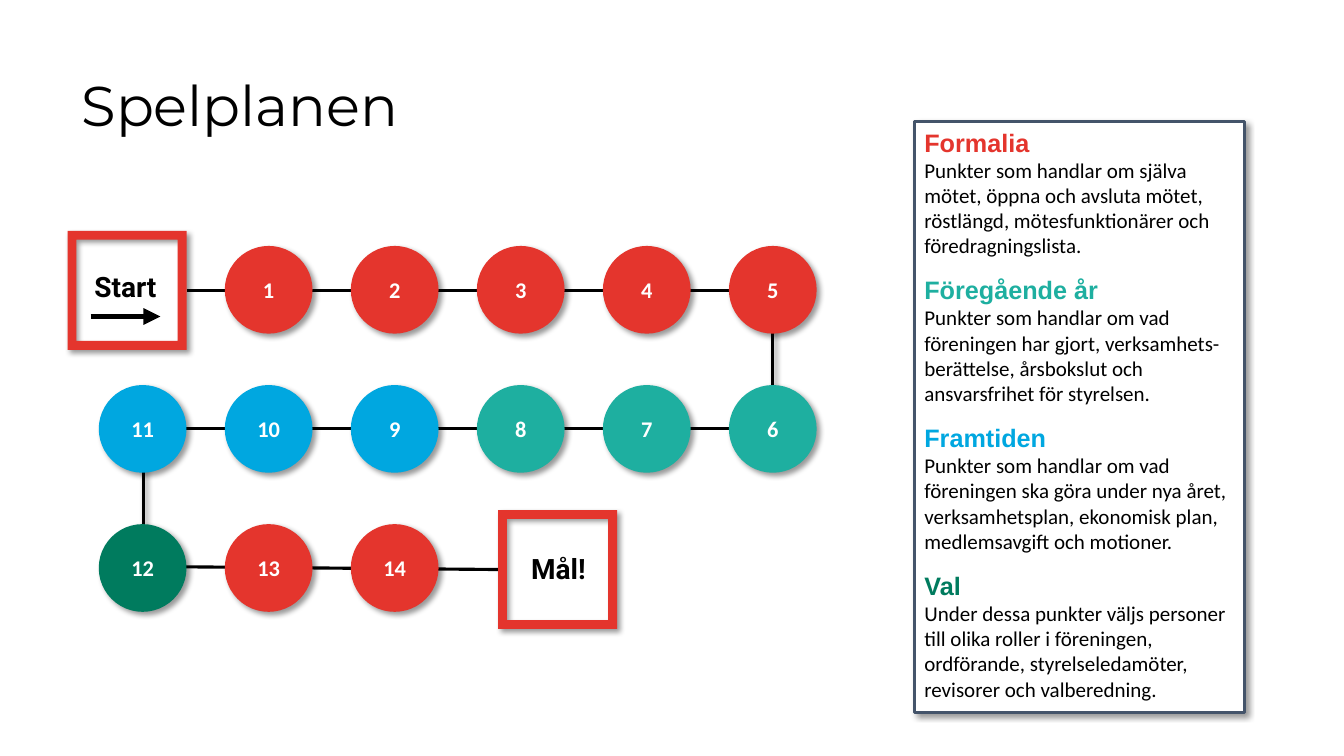
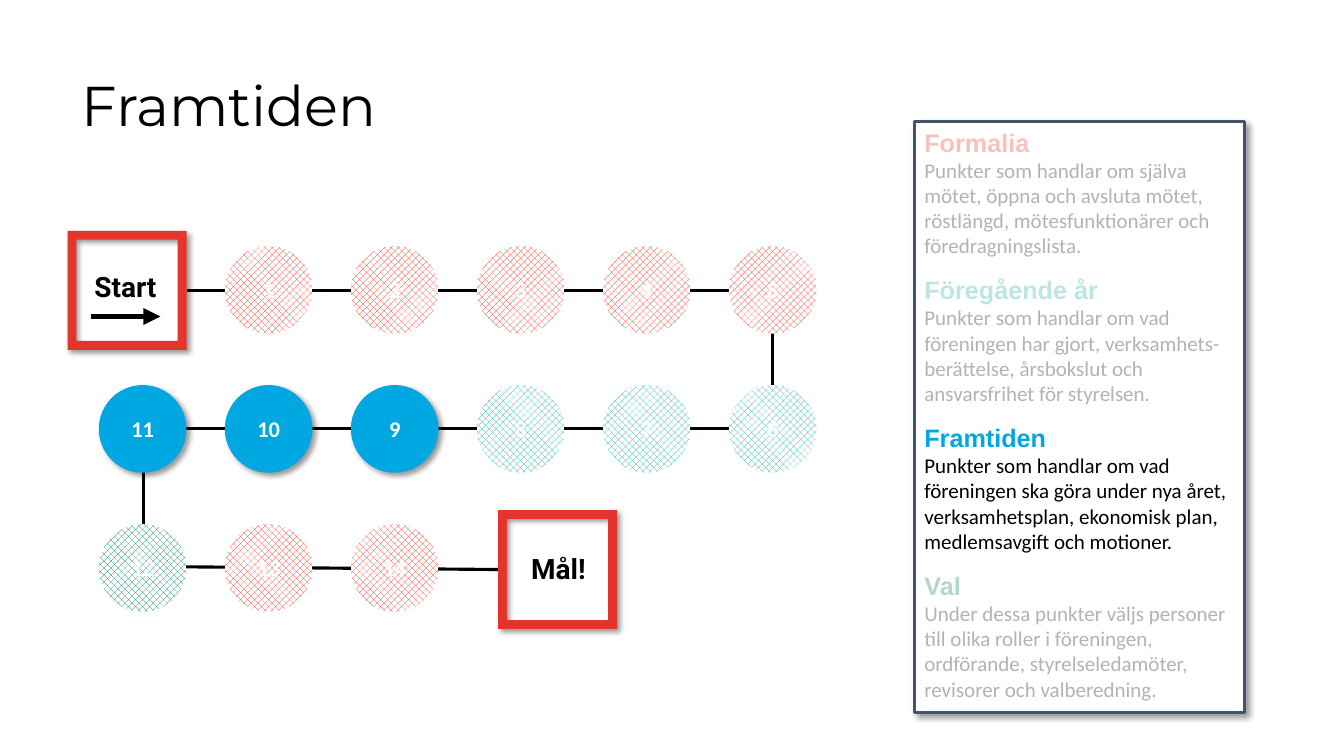
from dataclasses import dataclass
from typing import Optional

from pptx import Presentation
from pptx.dml.color import RGBColor
from pptx.enum.dml import MSO_PATTERN
from pptx.enum.shapes import MSO_CONNECTOR, MSO_SHAPE as Preset
from pptx.enum.text import MSO_ANCHOR as Anchor, MSO_AUTO_SIZE as AutoSize, PP_ALIGN as Align
from pptx.oxml import parse_xml
from pptx.oxml.ns import nsdecls
from pptx.util import Inches, Pt

RED = RGBColor(0xE4, 0x35, 0x2D)
TEAL = RGBColor(0x1E, 0xAF, 0xA0)
BLUE = RGBColor(0x00, 0xA7, 0xE0)
GREEN = RGBColor(0x00, 0x7B, 0x5E)
SLATE = RGBColor(0x44, 0x54, 0x6A)
BLACK = RGBColor(0, 0, 0)
WHITE = RGBColor(0xFF, 0xFF, 0xFF)

# Board grid
STOP_SIZE = 0.87
LEFT, TOP = 0.98, 2.44
COLUMN_STEP, ROW_STEP = 1.25, 1.38
GOAL_SIZE = 1.18


@dataclass(frozen=True)
class Section:
    heading: str
    body: str
    color: RGBColor
    stops: tuple[int, ...]


@dataclass(frozen=True)
class Box:
    left: float
    top: float
    width: float
    height: float

    def lengths(self) -> tuple:
        return tuple(Inches(n) for n in (self.left, self.top, self.width, self.height))


@dataclass(frozen=True)
class Track:
    start: tuple[float, float]
    end: tuple[float, float]
    vertical: bool = False


@dataclass(frozen=True)
class BoardSlide:
    title: str
    width: float
    focus: Optional[Section] = None
    veils: tuple[Box, ...] = ()


FORMALIA = Section(
    "Formalia",
    "Punkter som handlar om själva mötet, öppna och avsluta mötet, röstlängd, "
    "mötesfunktionärer och föredragningslista.",
    RED, (1, 2, 3, 4, 5, 13, 14))
PAST_YEAR = Section(
    "Föregående år",
    "Punkter som handlar om vad föreningen har gjort, verksamhets-\n"
    "berättelse, årsbokslut och ansvarsfrihet för styrelsen.",
    TEAL, (6, 7, 8))
FUTURE = Section(
    "Framtiden",
    "Punkter som handlar om vad föreningen ska göra under nya året, "
    "verksamhetsplan, ekonomisk plan, medlemsavgift och motioner.",
    BLUE, (9, 10, 11))
ELECTION = Section(
    "Val",
    "Under dessa punkter väljs personer till olika roller i föreningen, ordförande, "
    "styrelseledamöter, revisorer och valberedning.",
    GREEN, (12,))
SECTIONS = (FORMALIA, PAST_YEAR, FUTURE, ELECTION)

# Grid cells (row, column) in playing order: right, back left, right again
ROUTE = ([(0, column) for column in range(1, 6)]
         + [(1, column) for column in range(5, -1, -1)]
         + [(2, column) for column in range(3)])

TRACKS = (
    Track((1.42, 5.62), (4.94, 5.65)),
    Track((1.42, 4.25), (1.42, 5.63), vertical=True),
    Track((7.65, 4.25), (1.42, 4.25)),
    Track((7.66, 2.88), (7.66, 4.26), vertical=True),
    Track((1.85, 2.88), (7.65, 2.88)),
)

SLIDES = (
    BoardSlide("Spelplanen", 3.6),
    BoardSlide("Framtiden", 3.31, FUTURE,
               (Box(9.12, 5.62, 3.19, 1.41), Box(9.11, 1.26, 3.19, 2.8))),
)


def set_shadow(shape, visible: bool) -> None:
    """Replace the theme shadow; call after fill and line are set."""
    shadow = (
        f'<a:outerShdw blurRad="{Pt(4)}" dist="{Pt(3)}" dir="2700000" algn="tl" '
        'rotWithShape="0"><a:srgbClr val="000000"><a:alpha val="40000"/></a:srgbClr>'
        '</a:outerShdw>') if visible else ""
    shape._element.spPr.append(
        parse_xml(f'<a:effectLst {nsdecls("a")}>{shadow}</a:effectLst>'))


def style_font(paragraph, name: str, size: float, color: RGBColor, bold: bool = False) -> None:
    font = paragraph.font
    font.name, font.size, font.bold = name, Pt(size), bold
    font.color.rgb = color


def add_preset(slide, preset, box: Box, color: RGBColor, shadow: bool = True,
               pattern: bool = False, outline: Optional[RGBColor] = None):
    shape = slide.shapes.add_shape(preset, *box.lengths())
    if pattern:
        shape.fill.patterned()
        shape.fill.pattern = MSO_PATTERN.PERCENT_50
        shape.fill.fore_color.rgb = color
        shape.fill.back_color.rgb = WHITE
    else:
        shape.fill.solid()
        shape.fill.fore_color.rgb = color
    if outline is None:
        shape.line.fill.background()
    else:
        shape.line.color.rgb = outline
        shape.line.width = Pt(2.25)
    set_shadow(shape, shadow)
    return shape


def add_line(slide, start: tuple[float, float], end: tuple[float, float],
             width: float = 2.25, shadow: bool = False, arrow: bool = False) -> None:
    line = slide.shapes.add_connector(
        MSO_CONNECTOR.STRAIGHT, *(Inches(n) for n in (*start, *end)))
    line.line.color.rgb = BLACK
    line.line.width = Pt(width)
    if arrow:
        line.line._get_or_add_ln().append(
            parse_xml(f'<a:tailEnd {nsdecls("a")} type="triangle"/>'))
    set_shadow(line, shadow)


def add_title(slide, text: str, width: float) -> None:
    title = slide.shapes.title
    title.left, title.top, title.width, title.height = Box(0.71, 0.65, width, 0.77).lengths()
    frame = title.text_frame
    frame.text = text
    frame.word_wrap = False
    frame.auto_size = AutoSize.SHAPE_TO_FIT_TEXT
    frame.vertical_anchor = Anchor.TOP
    frame.paragraphs[0].alignment = Align.LEFT
    style_font(frame.paragraphs[0], "Montserrat", 40, BLACK)


def add_stop(slide, number: int, focus: Optional[Section]) -> None:
    row, column = ROUTE[number - 1]
    section = next(s for s in SECTIONS if number in s.stops)
    active = focus in (None, section)
    box = Box(LEFT + column * COLUMN_STEP, TOP + row * ROW_STEP, STOP_SIZE, STOP_SIZE)
    stop = add_preset(slide, Preset.OVAL, box, section.color, shadow=active, pattern=not active)
    frame = stop.text_frame
    frame.text = str(number)
    frame.vertical_anchor = Anchor.MIDDLE
    frame.paragraphs[0].alignment = Align.CENTER
    style_font(frame.paragraphs[0], "Calibri", 16, WHITE, bold=True)


def add_goal(slide, label: str, left: float, top: float, label_box: Box) -> None:
    goal = add_preset(slide, Preset.FRAME, Box(left, top, GOAL_SIZE, GOAL_SIZE), RED)
    goal.adjustments[0] = 0.075
    frame = slide.shapes.add_textbox(*label_box.lengths()).text_frame
    frame.word_wrap = True
    frame.auto_size = AutoSize.SHAPE_TO_FIT_TEXT
    frame.text = label
    frame.paragraphs[0].alignment = Align.CENTER
    style_font(frame.paragraphs[0], "Roboto", 20, BLACK, bold=True)


def add_legend(slide) -> None:
    legend = add_preset(slide, Preset.RECTANGLE, Box(9.07, 1.21, 3.27, 5.86), WHITE, outline=SLATE)
    frame = legend.text_frame
    frame.word_wrap = True
    frame.auto_size = AutoSize.SHAPE_TO_FIT_TEXT
    frame.vertical_anchor = Anchor.TOP
    for index, section in enumerate(SECTIONS):
        heading = frame.add_paragraph() if index else frame.paragraphs[0]
        heading.text = section.heading
        if index:
            heading.space_before = Pt(12)
        style_font(heading, "Arial", 18, section.color, bold=True)
        body = frame.add_paragraph()
        body.text = section.body
        style_font(body, "Calibri", 15, BLACK)
    for paragraph in frame.paragraphs:
        paragraph.alignment = Align.LEFT


def add_veil(slide, box: Box) -> None:
    veil = add_preset(slide, Preset.RECTANGLE, box, WHITE, shadow=False)
    color = veil._element.spPr.find(".//{*}solidFill/{*}srgbClr")
    color.append(parse_xml(f'<a:alpha {nsdecls("a")} val="70000"/>'))


def build_board(deck, board: BoardSlide) -> None:
    slide = deck.slides.add_slide(deck.slide_layouts[5])
    add_title(slide, board.title, board.width)

    # Board: tracks, numbered stops, start and goal
    for track in TRACKS:
        add_line(slide, track.start, track.end, shadow=track.vertical and board.focus is None)
    for number in range(1, len(ROUTE) + 1):
        add_stop(slide, number, board.focus)
    add_goal(slide, "Start", 0.67, 2.29, Box(0.81, 2.62, 0.87, 0.44))
    add_line(slide, (0.9, 3.14), (1.59, 3.14), width=4, arrow=True)
    add_goal(slide, "Mål!", 4.94, 5.06, Box(5.06, 5.42, 0.96, 0.44))

    # Legend, with the sections out of focus faded
    add_legend(slide)
    for veil in board.veils:
        add_veil(slide, veil)


def main() -> None:
    deck = Presentation()
    deck.slide_width, deck.slide_height = Inches(13.33), Inches(7.5)
    for board in SLIDES:
        build_board(deck, board)
    deck.save("out.pptx")


if __name__ == "__main__":
    main()
